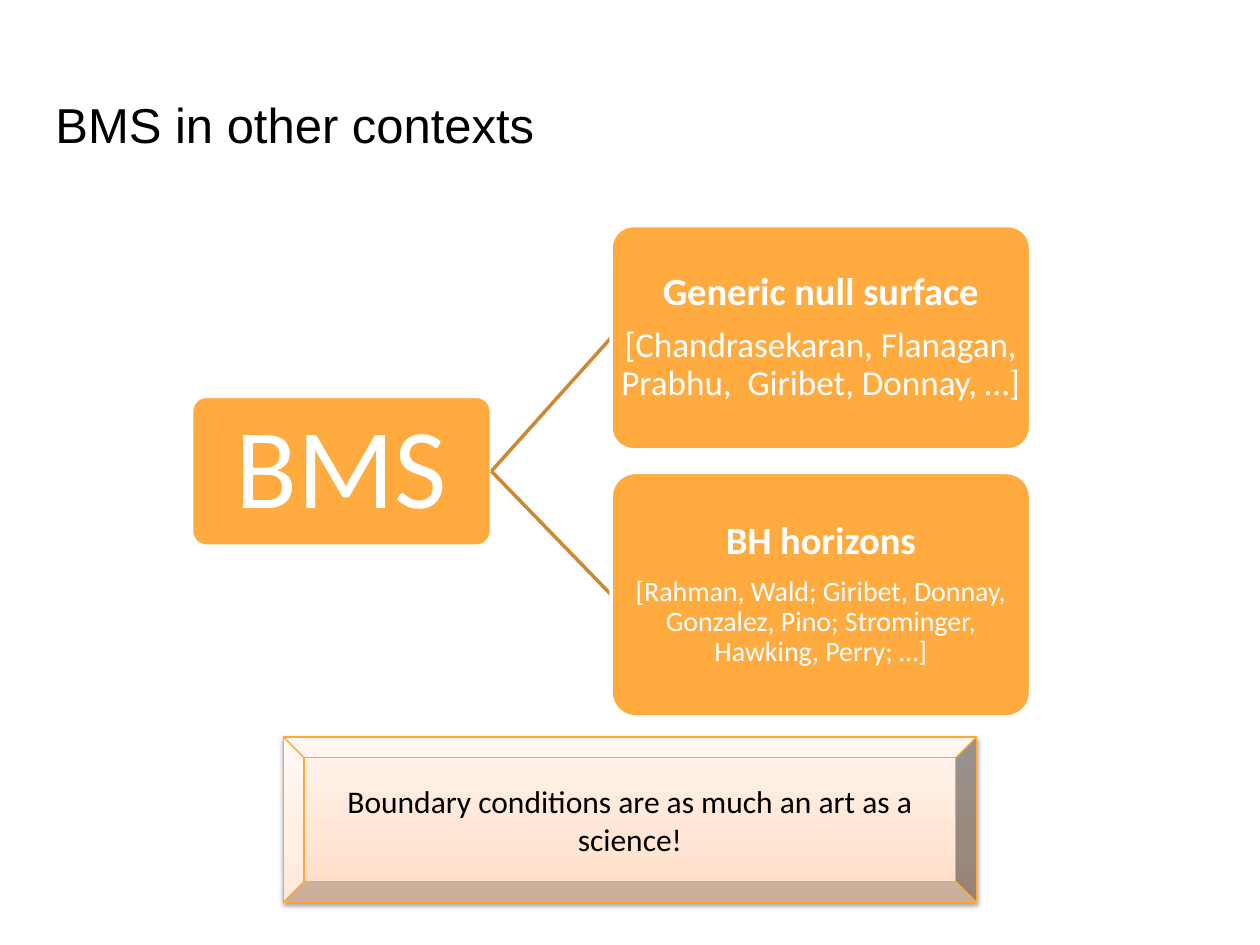
from pptx import Presentation
from pptx.dml.color import RGBColor
from pptx.enum.shapes import MSO_CONNECTOR as CONN, MSO_SHAPE as SHAPE
from pptx.enum.text import MSO_ANCHOR as ANCHOR, PP_ALIGN as ALIGN
from pptx.oxml import parse_xml
from pptx.oxml.ns import nsdecls
from pptx.util import Inches, Pt

ORANGE = RGBColor(0xFF, 0xAB, 0x40)
BROWN = RGBColor(0xCC, 0x89, 0x33)
BORDER = RGBColor(0xFE, 0xA8, 0x3A)
WHITE = RGBColor(0xFF, 0xFF, 0xFF)
BLACK = RGBColor(0, 0, 0)
GRADIENT = [(0, "FFDAC0"), (35, "FFE5D3"), (100, "FFF5EE")]

WIDTH, HEIGHT = 10, 7.5
TITLE = (0.34, 0.65, 9.32, 0.83)
TREE = (1.52, 1.79, 6.66, 3.9)
BANNER = (2.25, 5.85, 5.5, 1.31)

ROOT = [("BMS", 65, False)]
BRANCHES = [
    (1.78, [("Generic null surface", 22, True),
            ("[Chandrasekaran, Flanagan, Prabhu,  Giribet, Donnay, …]", 20, False)]),
    (1.94, [("BH horizons", 22, True),
            ("[Rahman, Wald; Giribet, Donnay, Gonzalez, Pino; Strominger, "
             "Hawking, Perry; …]", 16, False)]),
]


def add_run(p, text, size, color, font="Calibri", bold=False):
    r = p.add_run()
    r.text = text
    r.font.name, r.font.size, r.font.bold = font, Pt(size), bold
    r.font.color.rgb = color


def set_insets(tf, inset):
    tf.margin_left = tf.margin_right = Inches(inset)
    tf.margin_top = tf.margin_bottom = Inches(inset)


def add_title(slide, box):
    sp = slide.shapes.title
    sp.left, sp.top, sp.width, sp.height = map(Inches, box)
    tf = sp.text_frame
    set_insets(tf, 0.1)
    tf.vertical_anchor = ANCHOR.TOP
    p = tf.paragraphs[0]
    p.alignment = ALIGN.LEFT
    add_run(p, "BMS in other contexts", 28, BLACK, "Arial")


def add_node(slide, box, lines, inset):
    sp = slide.shapes.add_shape(SHAPE.ROUNDED_RECTANGLE, *map(Inches, box))
    sp.adjustments[0] = 0.1
    sp.shadow.inherit = False
    sp.fill.solid()
    sp.fill.fore_color.rgb = ORANGE
    sp.line.color.rgb = WHITE
    sp.line.width = Pt(2)
    tf = sp.text_frame
    tf.word_wrap = True
    tf.vertical_anchor = ANCHOR.MIDDLE
    set_insets(tf, inset)
    for i, (text, size, bold) in enumerate(lines):
        p = tf.add_paragraph() if i else tf.paragraphs[0]
        p.alignment = ALIGN.CENTER
        p.line_spacing = 0.9
        p.space_after = Pt(round(size * 0.35))
        add_run(p, text, size, WHITE, bold=bold)


def add_branch_line(slide, start, end):
    cx = slide.shapes.add_connector(CONN.STRAIGHT, *map(Inches, start + end))
    cx.line.color.rgb = BROWN
    cx.line.width = Pt(2)
    cx._element.spPr.append(parse_xml(f"<a:effectLst {nsdecls('a')}/>"))


def add_tree(slide, box):
    x, y, w, h = box
    root_w, root_h, leaf_w = 2.38, 1.19, w / 2
    gap = (h - sum(leaf_h for leaf_h, _ in BRANCHES)) / (len(BRANCHES) - 1)
    mid_y = y + h / 2
    leaf_x = x + w - leaf_w
    add_node(slide, (x, mid_y - root_h / 2, root_w, root_h), ROOT, 0.05)
    for leaf_h, lines in BRANCHES:
        add_branch_line(slide, (x + root_w, mid_y), (leaf_x, y + leaf_h / 2))
        add_node(slide, (leaf_x, y, leaf_w, leaf_h), lines, 0.02)
        y += leaf_h + gap


def add_banner(slide, box):
    sp = slide.shapes.add_shape(SHAPE.BEVEL, *map(Inches, box))
    sp.line.color.rgb = BORDER
    sp.line.width = Pt(0.75)
    stops = "".join(f'<a:gs pos="{pos * 1000}"><a:srgbClr val="{color}"/></a:gs>'
                    for pos, color in GRADIENT)
    spPr = sp._element.spPr
    spPr.insert(2, parse_xml(
        f'<a:gradFill {nsdecls("a")} rotWithShape="1"><a:gsLst>{stops}</a:gsLst>'
        '<a:lin ang="16200000" scaled="0"/></a:gradFill>'))
    spPr.append(parse_xml(
        f'<a:effectLst {nsdecls("a")}><a:outerShdw blurRad="{Pt(3.1)}" '
        f'dist="{Pt(1.6)}" dir="5400000" rotWithShape="0"><a:srgbClr val="000000">'
        '<a:alpha val="38000"/></a:srgbClr></a:outerShdw></a:effectLst>'))
    tf = sp.text_frame
    tf.word_wrap = True
    tf.vertical_anchor = ANCHOR.MIDDLE
    p = tf.paragraphs[0]
    p.alignment = ALIGN.CENTER
    add_run(p, "Boundary conditions are as much an art as a science!", 18, BLACK)


def main():
    prs = Presentation()
    prs.slide_width, prs.slide_height = Inches(WIDTH), Inches(HEIGHT)
    slide = prs.slides.add_slide(prs.slide_layouts[5])
    add_title(slide, TITLE)
    add_tree(slide, TREE)
    add_banner(slide, BANNER)
    prs.save("out.pptx")


if __name__ == "__main__":
    main()
